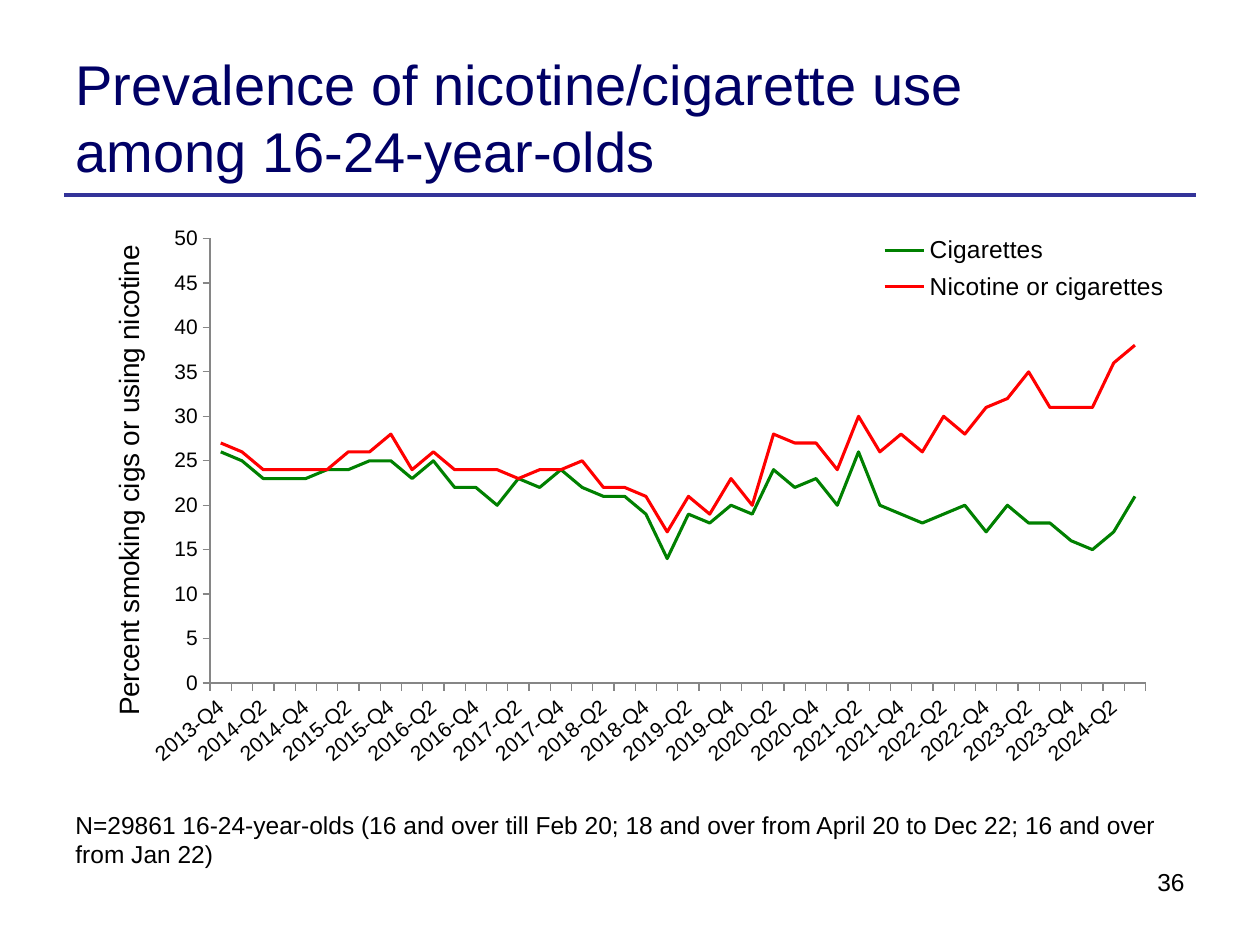
from lxml import etree
from pptx import Presentation
from pptx.chart.data import CategoryChartData
from pptx.dml.color import RGBColor
from pptx.enum.chart import XL_CHART_TYPE, XL_LEGEND_POSITION, XL_TICK_MARK
from pptx.enum.shapes import MSO_CONNECTOR
from pptx.enum.text import MSO_ANCHOR, PP_ALIGN
from pptx.oxml.ns import qn
from pptx.util import Inches, Pt

LINE_CHART = XL_CHART_TYPE.LINE
LEGEND_RIGHT = XL_LEGEND_POSITION.RIGHT
TICK_OUT, TICK_NONE = XL_TICK_MARK.OUTSIDE, XL_TICK_MARK.NONE
STRAIGHT = MSO_CONNECTOR.STRAIGHT
TOP, MIDDLE = MSO_ANCHOR.TOP, MSO_ANCHOR.MIDDLE
LEFT, RIGHT = PP_ALIGN.LEFT, PP_ALIGN.RIGHT

NAVY = RGBColor(0x00, 0x00, 0x66)
INDIGO = RGBColor(0x33, 0x33, 0x99)
BLACK = RGBColor(0x00, 0x00, 0x00)
GRAY = RGBColor(0x86, 0x86, 0x86)
GREEN = RGBColor(0x00, 0x80, 0x00)
RED = RGBColor(0xFF, 0x00, 0x00)

QUARTERS = [f"{2013 + i // 4}-Q{i % 4 + 1}" for i in range(3, 47)]
SERIES = [
    ("Cigarettes", GREEN,
     [26, 25, 23, 23, 23, 24, 24, 25, 25, 23, 25, 22, 22, 20, 23,
      22, 24, 22, 21, 21, 19, 14, 19, 18, 20, 19, 24, 22, 23, 20,
      26, 20, 19, 18, 19, 20, 17, 20, 18, 18, 16, 15, 17, 21]),
    ("Nicotine or cigarettes", RED,
     [27, 26, 24, 24, 24, 24, 26, 26, 28, 24, 26, 24, 24, 24, 23,
      24, 24, 25, 22, 22, 21, 17, 21, 19, 23, 20, 28, 27, 27, 24,
      30, 26, 28, 26, 30, 28, 31, 32, 35, 31, 31, 31, 36, 38]),
]


def set_layout(parent, index, **values):
    for old in parent.findall(qn("c:layout")):
        parent.remove(old)
    layout = etree.Element(qn("c:layout"))
    manual = etree.SubElement(layout, qn("c:manualLayout"))
    for tag, value in values.items():
        etree.SubElement(manual, qn(f"c:{tag}")).set("val", str(value))
    parent.insert(index, layout)


class SlideBuilder:
    font_name = "Arial"

    def __init__(self, prs):
        self.slide = prs.slides.add_slide(prs.slide_layouts[5])

    def style(self, font, size, color=BLACK):
        font.name = self.font_name
        font.size = Pt(size)
        font.bold = False
        font.color.rgb = color

    def fill_text(self, sp, text, size, color, align, anchor):
        tf = sp.text_frame
        tf.text = text
        tf.word_wrap = True
        tf.vertical_anchor = anchor
        p = tf.paragraphs[0]
        p.alignment = align
        self.style(p.runs[0].font, size, color)

    def title(self, text, left, top, width, height):
        sp = self.slide.shapes.title
        sp.left, sp.top = Inches(left), Inches(top)
        sp.width, sp.height = Inches(width), Inches(height)
        self.fill_text(sp, text, 32, NAVY, LEFT, MIDDLE)

    def text(self, text, left, top, width, height, align=LEFT):
        sp = self.slide.shapes.add_textbox(
            Inches(left), Inches(top), Inches(width), Inches(height))
        self.fill_text(sp, text, 14, BLACK, align, TOP)

    def rule(self, left, right, y):
        line = self.slide.shapes.add_connector(
            STRAIGHT, Inches(left), Inches(y), Inches(right), Inches(y))
        line.line.color.rgb = INDIGO
        line.line.width = Pt(2.25)
        etree.SubElement(line._element.spPr, qn("a:effectLst"))

    def axis(self, axis):
        axis.has_major_gridlines = False
        axis.major_tick_mark = TICK_OUT
        axis.minor_tick_mark = TICK_NONE
        axis.format.line.color.rgb = GRAY
        axis.format.line.width = Pt(0.75)
        self.style(axis.tick_labels.font, 12)

    def line_chart(self, categories, series, axis_title, left, top, width, height):
        data = CategoryChartData()
        data.categories = categories
        for name, _, values in series:
            data.add_series(name, values)
        chart = self.slide.shapes.add_chart(
            LINE_CHART, Inches(left), Inches(top),
            Inches(width), Inches(height), data).chart
        self.style(chart.font, 18)
        chart.has_title = False
        plot = chart.plots[0]
        plot.vary_by_categories = False
        for ser, (_, color, _) in zip(plot.series, series):
            ser.smooth = False
            ser.format.line.color.rgb = color
            ser.format.line.width = Pt(1.75)
        set_layout(chart._chartSpace.chart.plotArea, 0, layoutTarget="inner",
                   xMode="edge", yMode="edge", x=0.132, y=0.037, w=0.825, h=0.713)

        cat_axis = chart.category_axis
        self.axis(cat_axis)
        cat_el = cat_axis._element
        cat_el.find(qn("c:txPr")).find(qn("a:bodyPr")).set("rot", "-2400000")
        skip = etree.Element(qn("c:tickLblSkip"))
        skip.set("val", "2")
        cat_el.find(qn("c:noMultiLvlLbl")).addprevious(skip)

        val_axis = chart.value_axis
        self.axis(val_axis)
        val_axis.minimum_scale, val_axis.maximum_scale = 0, 50
        val_axis.major_unit = 5
        tf = val_axis.axis_title.text_frame
        tf.text = axis_title
        self.style(tf.paragraphs[0].runs[0].font, 16)
        body = tf._txBody.bodyPr
        body.set("rot", "-5400000")
        body.set("vert", "horz")
        set_layout(val_axis.axis_title._element, 1,
                   xMode="edge", yMode="edge", x=0.04, y=0.04)

        chart.has_legend = True
        legend = chart.legend
        legend.position = LEGEND_RIGHT
        legend.include_in_layout = False
        self.style(legend.font, 14)
        set_layout(legend._element, 1, xMode="edge", yMode="edge",
                   x=0.7, y=0.02, w=0.3, h=0.13)


def main():
    prs = Presentation()
    prs.slide_width, prs.slide_height = Inches(10), Inches(7.5)
    s = SlideBuilder(prs)
    s.rule(0.51, 9.49, 1.55)
    s.title("Prevalence of nicotine/cigarette use among 16-24-year-olds",
            0.5, 0.3, 7.89, 1.25)
    s.text("36", 6.73, 6.83, 2.77, 0.52, RIGHT)
    s.line_chart(QUARTERS, SERIES, "Percent smoking cigs or using nicotine",
                 0.48, 1.71, 9, 4.95)
    s.text("N=29861 16-24-year-olds (16 and over till Feb 20; 18 and over from "
           "April 20 to Dec 22; 16 and over from Jan 22)", 0.5, 6.38, 8.89, 0.57)
    prs.save("out.pptx")


if __name__ == "__main__":
    main()
